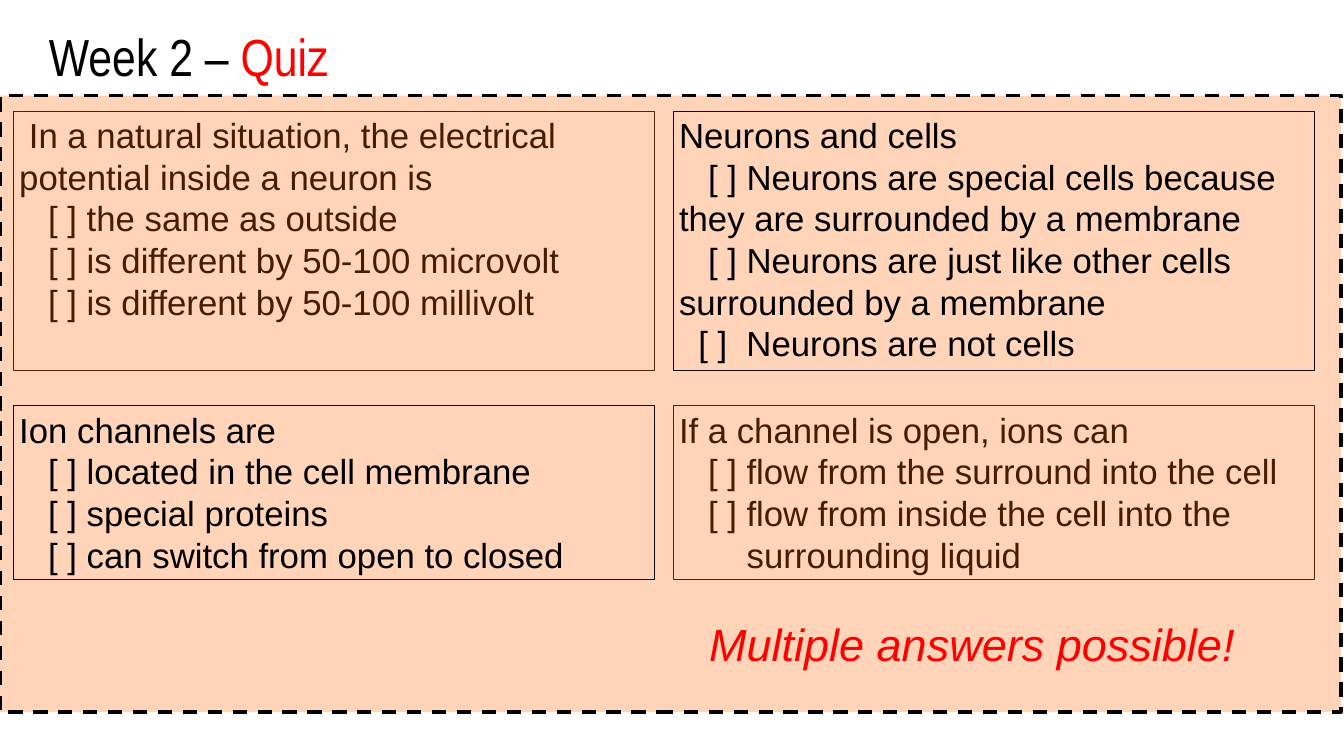
import dataclasses

import pptx
import pptx.dml.color
import pptx.enum.dml
import pptx.enum.shapes
import pptx.enum.text
import pptx.oxml
import pptx.oxml.ns
import pptx.util

Inches = pptx.util.Inches
Pt = pptx.util.Pt


@dataclasses.dataclass(frozen=True)
class Theme:
    black: str = "000000"
    red: str = "FF0000"
    orange: str = "FF6600"
    outline: str = "0D0D0D"
    title_font: str = "Arial Narrow"
    body_font: str = "Arial"
    title_size: int = 66
    question_size: int = 44
    hint_size: int = 57


class QuizSlide:
    def __init__(self, presentation, theme):
        self.theme = theme
        self.slide = presentation.slides.add_slide(presentation.slide_layouts[5])

    def apply(self, target, values):
        for name, value in values.items():
            setattr(target, name, value)

    def add_run(self, paragraph, text, color, **values):
        run = paragraph.add_run()
        run.text = text
        self.apply(run.font, values)
        run.font.color.rgb = pptx.dml.color.RGBColor.from_string(color)

    def place(self, shape, left, top, width, height):
        box = {"left": left, "top": top, "width": width, "height": height}
        self.apply(shape, {name: Inches(value) for name, value in box.items()})

    def add_title(self, parts, *box):
        title = self.slide.shapes.title
        self.place(title, *box)
        self.apply(title.text_frame, {
            "word_wrap": True,
            "auto_size": pptx.enum.text.MSO_AUTO_SIZE.NONE,
            "vertical_anchor": pptx.enum.text.MSO_ANCHOR.TOP,
            "margin_top": Inches(0.07),
        })
        paragraph = title.text_frame.paragraphs[0]
        paragraph.alignment = pptx.enum.text.PP_ALIGN.LEFT
        for text, color in parts:
            self.add_run(paragraph, text, color, name=self.theme.title_font,
                         size=Pt(self.theme.title_size))

    def add_rectangle(self, color, line_width, *box):
        shape = self.slide.shapes.add_shape(
            pptx.enum.shapes.MSO_SHAPE.RECTANGLE, *map(Inches, box))
        shape.shadow.inherit = False
        shape.fill.background()
        shape.line.color.rgb = pptx.dml.color.RGBColor.from_string(color)
        shape.line.width = Pt(line_width)
        return shape

    def add_panel(self, opacity, *box):
        panel = self.add_rectangle(self.theme.black, 4.5, *box)
        panel.line.dash_style = pptx.enum.dml.MSO_LINE.DASH
        panel.fill.solid()
        panel.fill.fore_color.rgb = pptx.dml.color.RGBColor.from_string(self.theme.orange)
        color = panel.fill._xPr.find(".//" + pptx.oxml.ns.qn("a:srgbClr"))
        alpha = pptx.oxml.parse_xml(
            f'<a:alpha {pptx.oxml.ns.nsdecls("a")} val="{opacity * 1000}"/>')
        color.append(alpha)

    def add_question(self, lines, *box):
        frame = self.add_rectangle(self.theme.outline, 0.75, *box).text_frame
        self.apply(frame, {
            "word_wrap": True,
            "vertical_anchor": pptx.enum.text.MSO_ANCHOR.TOP,
        })
        for index, (indent, text) in enumerate(lines):
            paragraph = frame.add_paragraph() if index else frame.paragraphs[0]
            paragraph.alignment = pptx.enum.text.PP_ALIGN.LEFT
            paragraph._p.get_or_add_pPr().set("indent", str(Inches(indent)))
            self.add_run(paragraph, text, self.theme.black, name=self.theme.body_font,
                         size=Pt(self.theme.question_size))

    def add_hint(self, text, *box):
        frame = self.slide.shapes.add_textbox(*map(Inches, box)).text_frame
        frame.word_wrap = False
        self.add_run(frame.paragraphs[0], text, self.theme.red, name=self.theme.body_font,
                     size=Pt(self.theme.hint_size), italic=True)


def main():
    presentation = pptx.Presentation()
    presentation.slide_width = Inches(23.63)
    presentation.slide_height = Inches(13.29)
    theme = Theme()
    quiz = QuizSlide(presentation, theme)

    left, right, width = 0.24, 11.84, 11.26
    upper, lower = (1.95, 4.56), (7.13, 3.06)
    option = 0.51

    potential = [
        (0.17, "In a natural situation, the electrical potential inside a neuron is"),
        (option, "[ ] the same as outside"),
        (option, "[ ] is different by 50-100 microvolt"),
        (option, "[ ] is different by 50-100 millivolt"),
    ]
    open_channel = [
        (0, "If a channel is open, ions can"),
        (option, "[ ] flow from the surround into the cell"),
        (option, "[ ] flow from inside the cell into the"),
        (1.19, "surrounding liquid"),
    ]
    cells = [
        (0, "Neurons and cells"),
        (option, "[ ] Neurons are special cells because they are surrounded by a membrane"),
        (option, "[ ] Neurons are just like other cells surrounded by a membrane"),
        (0.34, "[ ]  Neurons are not cells"),
    ]
    ion_channels = [
        (0, "Ion channels are"),
        (option, "[ ] located in the cell membrane"),
        (option, "[ ] special proteins"),
        (option, "[ ] can switch from open to closed"),
    ]

    quiz.add_title([("Week 2 – ", theme.black), ("Quiz", theme.red)], 0.76, 0.35, 22.81, 1.61)
    covered = [(potential, left, upper), (open_channel, right, lower)]
    uncovered = [(cells, right, upper), (ion_channels, left, lower)]
    for lines, x, (top, height) in covered:
        quiz.add_question(lines, x, top, width, height)
    quiz.add_panel(28, 0, 1.68, 23.58, 10.84)
    for lines, x, (top, height) in uncovered:
        quiz.add_question(lines, x, top, width, height)
    quiz.add_hint("Multiple answers possible!", 12.37, 10.79, 9.54, 1.06)

    presentation.save("out.pptx")


if __name__ == "__main__":
    main()
